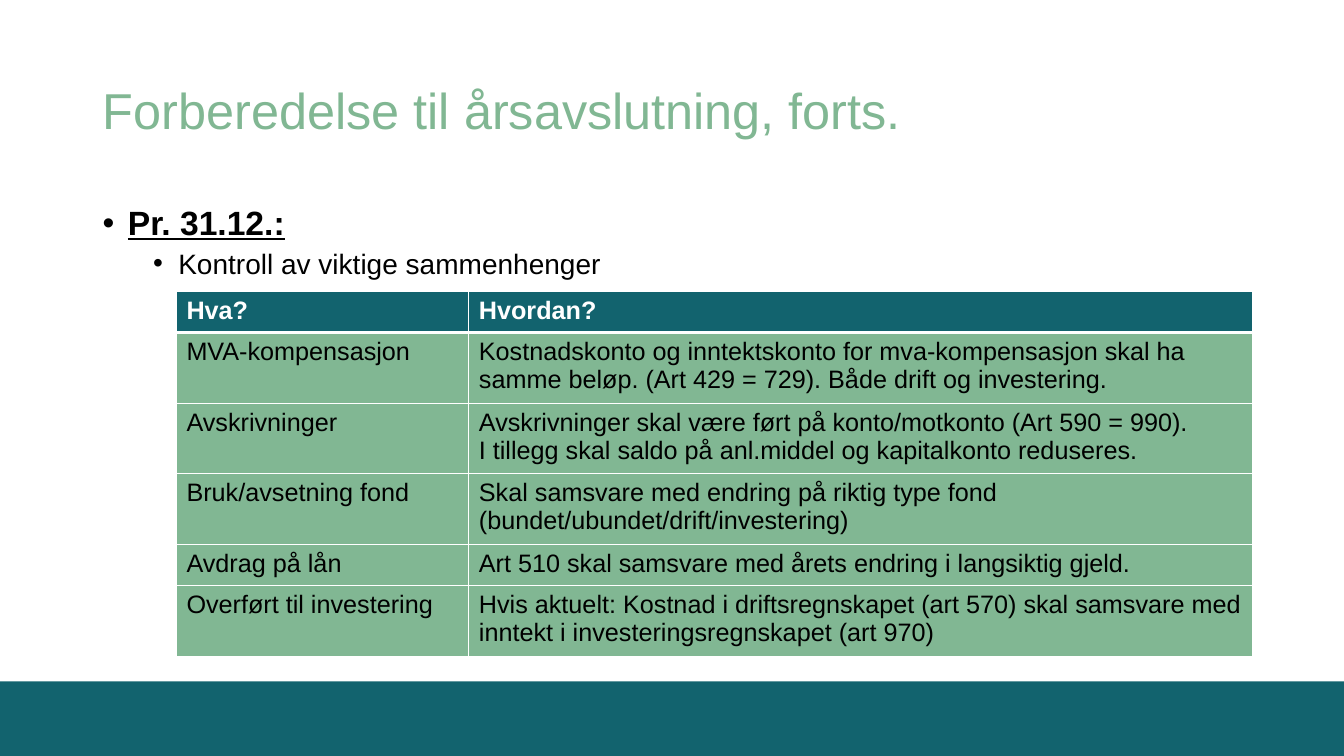
from lxml import etree
from pptx import Presentation
from pptx.dml.color import RGBColor
from pptx.enum.shapes import MSO_SHAPE
from pptx.enum.text import MSO_ANCHOR, PP_ALIGN
from pptx.oxml.ns import qn
from pptx.util import Inches, Pt

RECTANGLE = MSO_SHAPE.RECTANGLE
MIDDLE = MSO_ANCHOR.MIDDLE
LEFT = PP_ALIGN.LEFT
TEAL = RGBColor(0x12, 0x63, 0x6E)
GREEN = RGBColor(0x81, 0xB7, 0x93)
BLACK = RGBColor(0, 0, 0)
WHITE = RGBColor(255, 255, 255)

TITLE = "Forberedelse til årsavslutning, forts."
BULLETS = [
    ("Pr. 31.12.:", 0.25, 0, {"size": Pt(24), "bold": True, "underline": True}),
    ("Kontroll av viktige sammenhenger", 0.75, 5, {"size": Pt(20)}),
]
ROWS = [
    ("Hva?", "Hvordan?", 1),
    ("MVA-kompensasjon",
     "Kostnadskonto og inntektskonto for mva-kompensasjon skal ha samme beløp. "
     "(Art 429 = 729). Både drift og investering.", 2),
    ("Avskrivninger",
     "Avskrivninger skal være ført på konto/motkonto (Art 590 = 990).\n"
     "I tillegg skal saldo på anl.middel og kapitalkonto reduseres.", 2),
    ("Bruk/avsetning fond",
     "Skal samsvare med endring på riktig type fond "
     "(bundet/ubundet/drift/investering)", 2),
    ("Avdrag på lån",
     "Art 510 skal samsvare med årets endring i langsiktig gjeld.", 1),
    ("Overført til investering",
     "Hvis aktuelt: Kostnad i driftsregnskapet (art 570) skal samsvare med "
     "inntekt i investeringsregnskapet (art 970)", 2),
]
COL_WIDTHS = (2.9, 7.77)
ROW_HEIGHTS = {1: 0.41, 2: 0.66}


def style_font(font, color, **values):
    """Apply Arial, a colour and other format values to a font."""
    font.color.rgb = color
    for name, value in {"name": "Arial", **values}.items():
        setattr(font, name, value)


def add_bullet(p, indent):
    """Give a paragraph a round bullet with a hanging indent."""
    pPr = p._p.get_or_add_pPr()
    pPr.set("marL", str(Inches(indent)))
    pPr.set("indent", str(Inches(-0.25)))
    etree.SubElement(pPr, qn("a:buFont")).set("typeface", "Arial")
    etree.SubElement(pPr, qn("a:buChar")).set("char", "•")


def set_borders(cell, widths):
    """Draw white borders on a cell, with widths in points by side."""
    tcPr = cell._tc.get_or_add_tcPr()
    for i, (side, width) in enumerate(widths.items()):
        ln = etree.Element(qn(f"a:ln{side}"), w=str(Pt(width)))
        fill = etree.SubElement(ln, qn("a:solidFill"))
        etree.SubElement(fill, qn("a:srgbClr")).set("val", str(WHITE))
        tcPr.insert(i, ln)


def add_title(s):
    """Fill and place the title placeholder."""
    sp = s.shapes.title
    sp.left, sp.top, sp.width, sp.height = map(Inches, (0.92, 0.4, 11.5, 1.45))
    tf = sp.text_frame
    tf.text = TITLE
    tf.vertical_anchor = MIDDLE
    p = tf.paragraphs[0]
    p.alignment = LEFT
    p.line_spacing = 0.9
    style_font(p.runs[0].font, GREEN, size=Pt(36))


def add_bullets(s):
    """Add the two-level bullet list."""
    tf = s.shapes.add_textbox(*map(Inches, (0.92, 2, 11.5, 0.85))).text_frame
    tf.word_wrap = True
    for level, (text, indent, before, values) in enumerate(BULLETS):
        p = tf.add_paragraph() if level else tf.paragraphs[0]
        p.level = level
        p.line_spacing = 0.9
        p.space_before = Pt(before)
        add_bullet(p, indent)
        r = p.add_run()
        r.text = text
        style_font(r.font, BLACK, **values)


def add_control_table(s):
    """Add the table of what to check and how."""
    heights = [ROW_HEIGHTS[lines] for *_, lines in ROWS]
    frame = s.shapes.add_table(len(ROWS), len(COL_WIDTHS), *map(
        Inches, (1.75, 2.89, sum(COL_WIDTHS), sum(heights))))
    table = frame.table
    for col, width in zip(table.columns, COL_WIDTHS):
        col.width = Inches(width)
    for i, (*texts, _) in enumerate(ROWS):
        table.rows[i].height = Inches(heights[i])
        header = i == 0
        for j, text in enumerate(texts):
            cell = table.cell(i, j)
            cell.text = text
            cell.fill.solid()
            cell.fill.fore_color.rgb = TEAL if header else GREEN
            set_borders(cell, {"L": 1, "R": 1, "T": 3 if i == 1 else 1,
                               "B": 3 if header else 1})
            for p in cell.text_frame.paragraphs:
                style_font(p.runs[0].font, WHITE if header else BLACK,
                           size=Pt(18), bold=header)


def main():
    """Build the slide and save it."""
    prs = Presentation()
    prs.slide_width, prs.slide_height = Inches(13.33), Inches(7.5)
    s = prs.slides.add_slide(prs.slide_layouts[5])
    band = s.shapes.add_shape(RECTANGLE, 0, Inches(6.76), prs.slide_width, Inches(0.74))
    band.shadow.inherit = False
    band.fill.solid()
    band.fill.fore_color.rgb = TEAL
    band.line.fill.background()
    add_title(s)
    add_bullets(s)
    add_control_table(s)
    prs.save("out.pptx")


if __name__ == "__main__":
    main()
